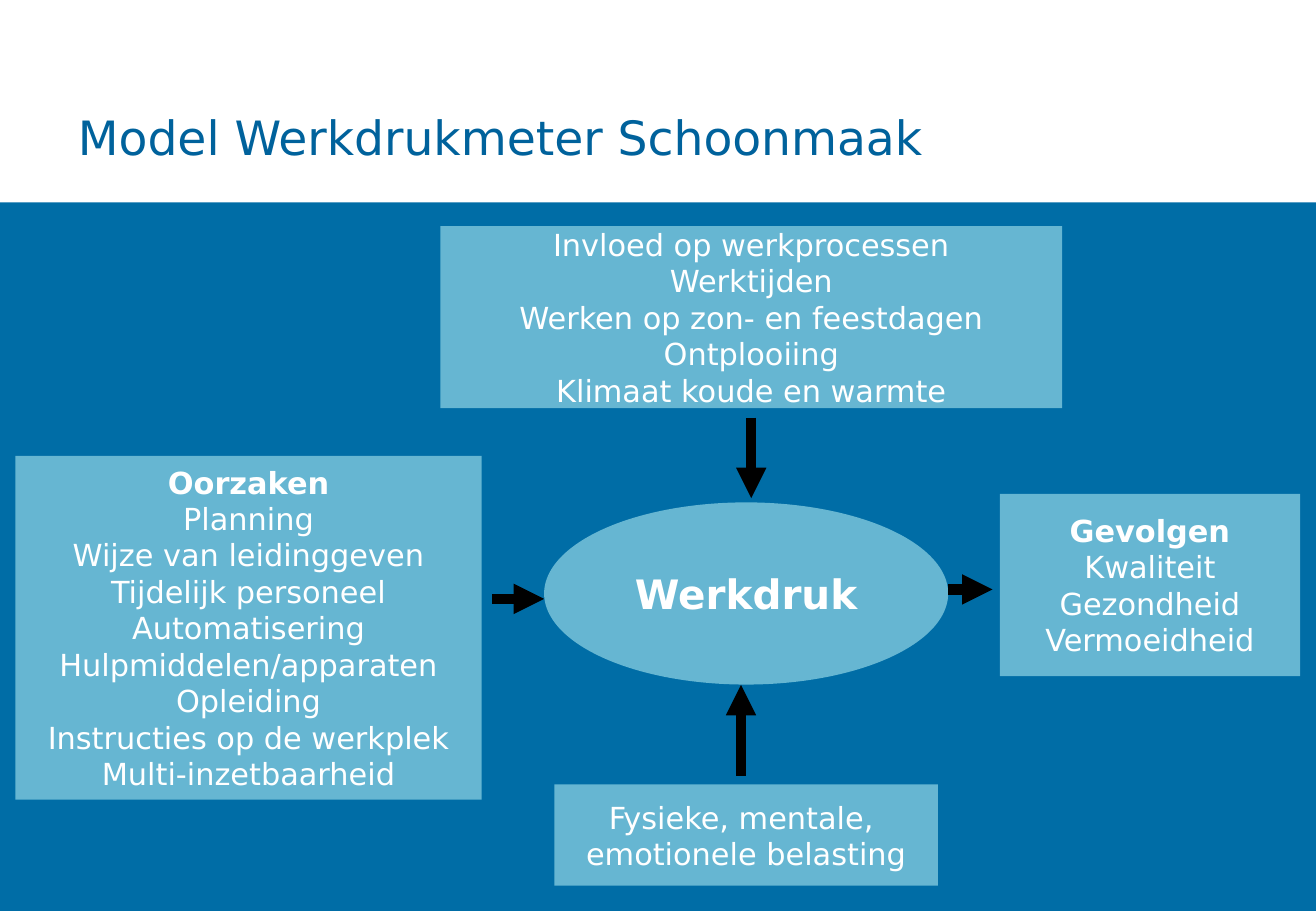
import pptx
import pptx.dml.color
import pptx.enum.shapes
import pptx.enum.text
import pptx.oxml.ns
import pptx.util
from lxml import etree

Pt = pptx.util.Pt
RGBColor = pptx.dml.color.RGBColor
SHAPE = pptx.enum.shapes.MSO_SHAPE
ALIGN = pptx.enum.text.PP_ALIGN
ANCHOR = pptx.enum.text.MSO_ANCHOR
qn = pptx.oxml.ns.qn

FONT = "DejaVu Sans"
BLUE = RGBColor(0x00, 0x6D, 0xA6)
TITLE_BLUE = RGBColor(0x00, 0x62, 0x9C)
PALE = RGBColor(0xCC, 0xFF, 0xFF)
WHITE = RGBColor(0xFF, 0xFF, 0xFF)
BLACK = RGBColor(0x00, 0x00, 0x00)

WIDTH, HEIGHT = 780, 540
BAND_TOP = 120
TITLE = "Model Werkdrukmeter Schoonmaak"

# shape, (left, top, width, height), bold heading, paragraphs, size
BOXES = [
    (SHAPE.RECTANGLE, (261, 134, 368.6, 108), None,
     ["Invloed op werkprocessen", "Werktijden", "Werken op zon- en feestdagen",
      "Ontplooiing", "Klimaat koude en warmte"], 18),
    (SHAPE.OVAL, (322.5, 297.8, 239.5, 108), "Werkdruk", [], 24),
    (SHAPE.RECTANGLE, (592.6, 292.8, 178, 108), "Gevolgen",
     ["Kwaliteit", "Gezondheid", "Vermoeidheid"], 18),
    (SHAPE.RECTANGLE, (9.1, 270.2, 276.5, 203.8), "Oorzaken",
     ["Planning\nWijze van leidinggeven", "Tijdelijk personeel", "Automatisering",
      "Hulpmiddelen/apparaten", "Opleiding", "Instructies op de werkplek",
      "Multi-inzetbaarheid"], 18),
    (SHAPE.RECTANGLE, (328.6, 465, 227.3, 60), None,
     ["Fysieke, mentale, \nemotionele belasting"], 18),
]

# from x, from y, to x, to y
ARROWS = [
    (445.3, 247.5, 445.3, 295.3),
    (439.2, 460, 439.2, 406),
    (562, 349.4, 588.3, 349.4),
    (291.6, 355, 322.5, 355),
]


def write(p, text, size=18, color=WHITE, bold=False, align=ALIGN.CENTER):
    p.text = text
    p.alignment = align
    for r in p.runs:
        r.font.name = FONT
        r.font.size = Pt(size)
        r.font.bold = bold
        r.font.color.rgb = color


def add_panel(s, kind, place, color, opacity=None):
    """Add a borderless filled shape; opacity is a percentage."""
    sp = s.shapes.add_shape(kind, *map(Pt, place))
    sp.shadow.inherit = False
    sp.fill.solid()
    sp.fill.fore_color.rgb = color
    sp.line.fill.background()
    if opacity is not None:
        clr = sp.fill._xPr.find(".//" + qn("a:srgbClr"))
        etree.SubElement(clr, qn("a:alpha")).set("val", str(opacity * 1000))
    return sp


def add_box(s, kind, place, heading, lines, size):
    tf = add_panel(s, kind, place, PALE, opacity=50).text_frame
    tf.word_wrap = False
    tf.vertical_anchor = ANCHOR.MIDDLE
    texts = ([heading] if heading else []) + lines
    for i, text in enumerate(texts):
        p = tf.add_paragraph() if i else tf.paragraphs[0]
        write(p, text, size=size, bold=text == heading)


def add_arrow(s, ends):
    cx = s.shapes.add_connector(pptx.enum.shapes.MSO_CONNECTOR.STRAIGHT, *map(Pt, ends))
    cx.line.color.rgb = BLACK
    cx.line.width = Pt(6)
    etree.SubElement(cx.line._get_or_add_ln(), qn("a:tailEnd")).set("type", "triangle")
    etree.SubElement(cx._element.spPr, qn("a:effectLst"))


def main():
    prs = pptx.Presentation()
    prs.slide_width, prs.slide_height = Pt(WIDTH), Pt(HEIGHT)
    s = prs.slides.add_slide(prs.slide_layouts[5])

    title = s.shapes.title
    title.left, title.top, title.width, title.height = map(Pt, (39, 60.5, 652, 71))
    title.text_frame.vertical_anchor = ANCHOR.TOP
    title.text_frame.word_wrap = True
    write(title.text_frame.paragraphs[0], TITLE, size=28, color=TITLE_BLUE, align=ALIGN.LEFT)

    add_panel(s, SHAPE.RECTANGLE, (0, BAND_TOP, WIDTH, HEIGHT - BAND_TOP), BLUE)
    for box in BOXES:
        add_box(s, *box)
    for ends in ARROWS:
        add_arrow(s, ends)
    prs.save("out.pptx")


if __name__ == "__main__":
    main()
